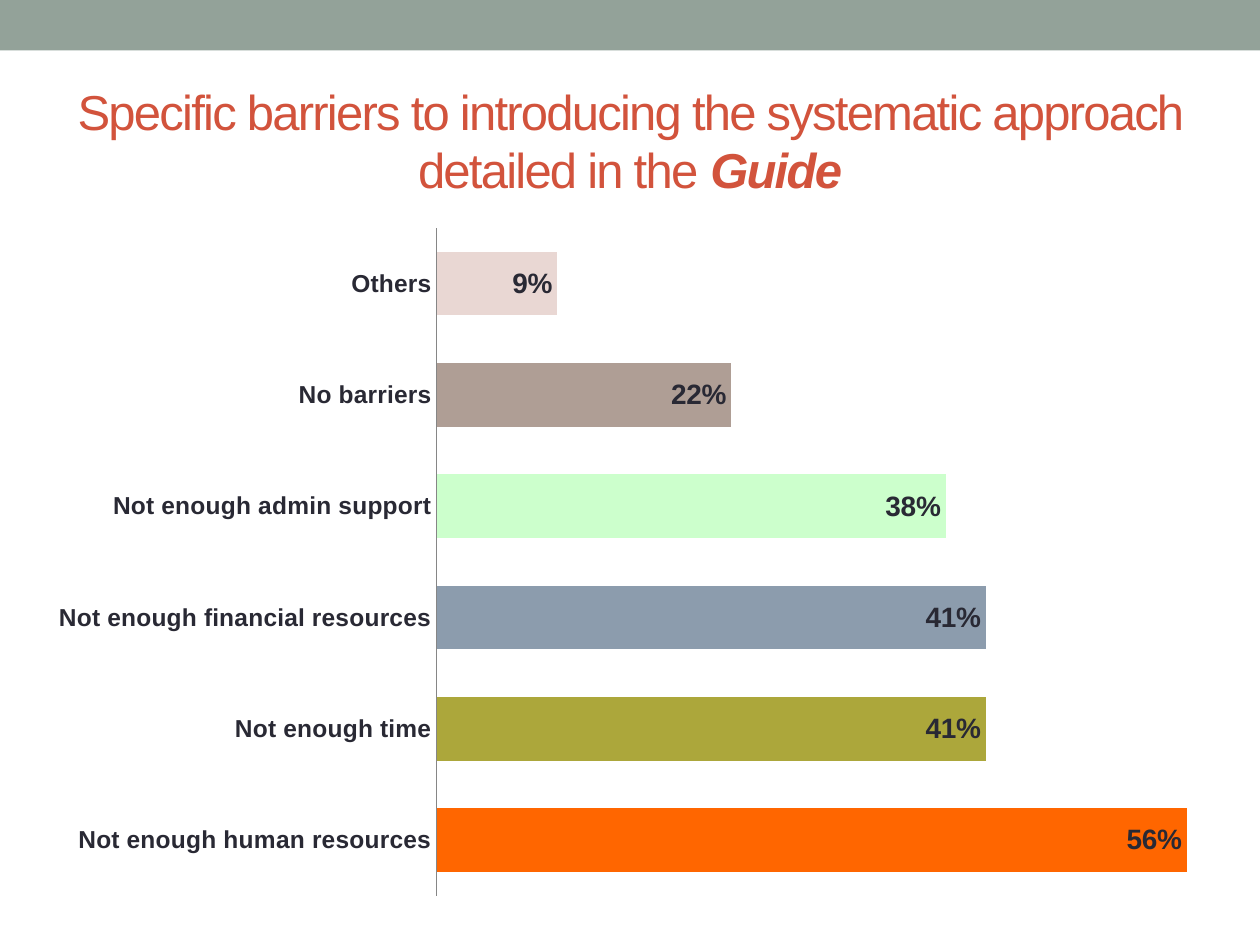
from dataclasses import dataclass

from lxml import etree
from pptx import Presentation
from pptx.chart.data import CategoryChartData
from pptx.dml.color import RGBColor
from pptx.enum import chart as ch, shapes, text
from pptx.oxml import ns
from pptx.util import Inches, Pt


@dataclass(frozen=True)
class Theme:
    """Colours, font and type sizes of the slide."""
    font: str = "Arial"
    band: str = "93A299"
    title: str = "D2533C"
    ink: str = "292934"
    axis: str = "868686"
    title_size: int = 28
    base_size: int = 10
    category_size: int = 14
    value_size: int = 16


THEME = Theme()
BARRIERS = [
    ("Not enough human resources", 0.56, "FF6600"),
    ("Not enough time", 0.41, "ACA73B"),
    ("Not enough financial resources", 0.41, "8C9CAD"),
    ("Not enough admin support", 0.38, "CCFFCC"),
    ("No barriers", 0.22, "AF9E95"),
    ("Others", 0.09, "E9D7D3"),
]


def rgb(value):
    """Turn a hex string into a colour."""
    return RGBColor.from_string(value)


def set_font(font, size, color=THEME.ink, bold=False, italic=False):
    """Format a font in the theme's typeface."""
    font.name, font.size = THEME.font, Pt(size)
    font.bold, font.italic = bold, italic
    font.color.rgb = rgb(color)


def add_text(p, content, *, spacing=0, **fmt):
    """Append a formatted run, with letter spacing in points."""
    r = p.add_run()
    r.text = content
    set_font(r.font, **fmt)
    r.font._element.set("spc", str(spacing * 100))


def place(sp, box):
    """Move a shape to a box of left, top, width and height in inches."""
    sp.left, sp.top, sp.width, sp.height = map(Inches, box)


def add_band(s, box):
    """Draw the band along the top edge."""
    sp = s.shapes.add_shape(shapes.MSO_SHAPE.RECTANGLE, *map(Inches, box))
    sp.shadow.inherit = False
    sp.fill.solid()
    sp.fill.fore_color.rgb = rgb(THEME.band)
    sp.line.fill.background()


def add_title(s, box):
    """Fill and format the title placeholder."""
    sp = s.shapes.title
    place(sp, box)
    tf = sp.text_frame
    tf.word_wrap = True
    tf.auto_size = text.MSO_AUTO_SIZE.NONE
    tf.vertical_anchor = text.MSO_ANCHOR.MIDDLE
    p = tf.paragraphs[0]
    p.alignment = text.PP_ALIGN.CENTER
    fmt = dict(size=THEME.title_size, color=THEME.title, spacing=-1)
    add_text(p, "Specific barriers to introducing the systematic approach "
                "detailed in the ", **fmt)
    add_text(p, "Guide", bold=True, italic=True, **fmt)


def set_plot_area(chart, **fractions):
    """Fix the inner plot area as fractions of the chart."""
    area = chart._chartSpace.chart.plotArea
    for old in area.findall(ns.qn("c:layout")):
        area.remove(old)
    layout = etree.Element(ns.qn("c:layout"))
    manual = etree.SubElement(layout, ns.qn("c:manualLayout"))
    settings = dict(layoutTarget="inner", xMode="edge", yMode="edge", **fractions)
    for name, value in settings.items():
        etree.SubElement(manual, ns.qn(f"c:{name}")).set("val", str(value))
    area.insert(0, layout)


def add_barrier_chart(s, box):
    """Add the bar chart of barriers, one colour for each."""
    names, values, colors = zip(*BARRIERS)
    data = CategoryChartData(number_format="0%")
    data.categories = names
    data.add_series("Series 1", values)
    chart = s.shapes.add_chart(
        ch.XL_CHART_TYPE.BAR_CLUSTERED, *map(Inches, box), data).chart
    chart.has_legend = chart.has_title = False
    set_font(chart.font, THEME.base_size)

    axis = chart.category_axis
    axis.major_tick_mark = axis.minor_tick_mark = ch.XL_TICK_MARK.NONE
    axis.format.line.color.rgb = rgb(THEME.axis)
    axis.format.line.width = Pt(1)
    set_font(axis.tick_labels.font, THEME.category_size, bold=True)
    scale = chart.value_axis
    scale.visible = scale.has_major_gridlines = False
    scale.minimum_scale, scale.maximum_scale = 0, 0.6

    plot = chart.plots[0]
    plot.vary_by_categories = False
    plot.gap_width, plot.overlap = 75, 40
    series = plot.series[0]
    series.invert_if_negative = False
    series.format.fill.solid()
    series.format.fill.fore_color.rgb = rgb(THEME.band)
    for i, color in enumerate(colors):
        fill = series.points[i].format.fill
        fill.solid()
        fill.fore_color.rgb = rgb(color)
    labels = series.data_labels
    labels.show_value = True
    labels.position = ch.XL_LABEL_POSITION.INSIDE_END
    labels.number_format, labels.number_format_is_linked = "0%", False
    set_font(labels.font, THEME.value_size, bold=True)
    set_plot_area(chart, x=0.327, y=0.02, w=0.655, h=0.96)


def main():
    """Build and save the slide."""
    prs = Presentation()
    prs.slide_width, prs.slide_height = Inches(10), Inches(7.5)
    s = prs.slides.add_slide(prs.slide_layouts.get_by_name("Title Only"))
    add_band(s, (0, 0, 10, 0.4))
    add_title(s, (0.5, 0.36, 9, 1.5))
    add_barrier_chart(s, (0.28, 1.7, 9.74, 5.52))
    prs.save("out.pptx")


if __name__ == "__main__":
    main()
